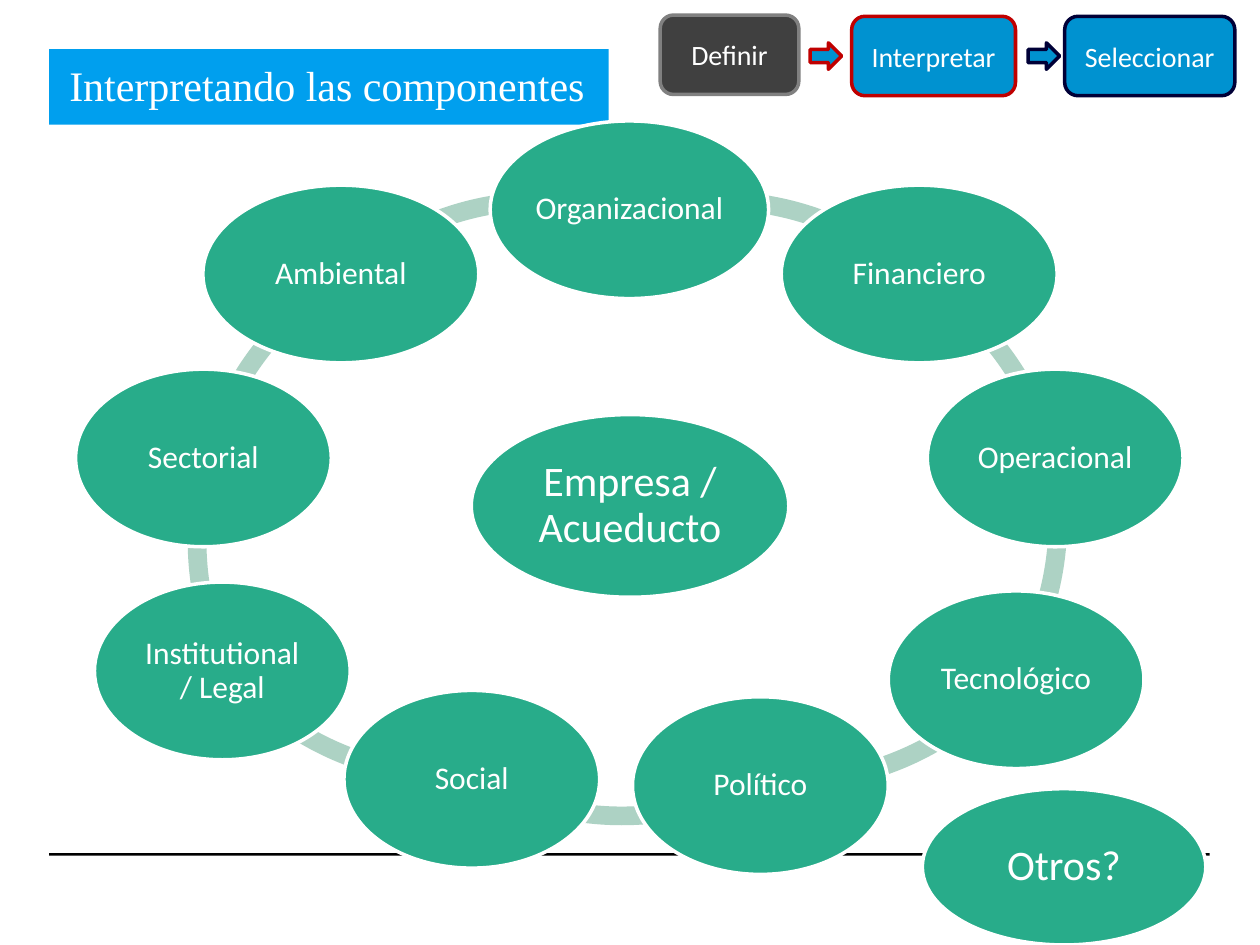
from pptx import Presentation
from pptx.dml.color import RGBColor
from pptx.enum.shapes import MSO_SHAPE
from pptx.enum.text import MSO_ANCHOR, PP_ALIGN
from pptx.util import Inches, Pt

COLORS = {
    "white": "FFFFFF", "black": "000000", "title": "009FEE",
    "green": "28AC8A", "arc": "ADD2C4", "blue": "0092D0",
    "red": "C00000", "navy": "000037", "dark": "404040", "gray": "808080",
}

# label, left, top, width within the ring
COMPONENTS = [
    ("Organizacional", 3.29, 0, 2.21),
    ("Financiero", 5.6, 0.51, 2.19),
    ("Operacional", 6.76, 1.97, 2.03),
    ("Tecnológico", 6.45, 3.73, 2.03),
    ("Político", 4.42, 4.57, 2.03),
    ("Social", 2.13, 4.52, 2.03),
    ("Institutional / Legal", 0.15, 3.66, 2.03),
    ("Sectorial", 0, 1.97, 2.03),
    ("Ambiental", 1.01, 0.51, 2.19),
]
# left, top within the ring, start and end adjustments
ARCS = [
    (1.3, 0.56, 136.56, 172.37),
    (0.91, 0.85, 116.33, 143.7),
    (0.89, 0.94, 92.4, 117.64),
    (0.6, 0.48, 51.71, 84.56),
    (1.94, 0.8, 37.28, 72.07),
    (3.26, 0.53, 23.98, 57.27),
    (3.08, 0.78, 208.67, 19.48),
    (3.1, 0.84, 180.44, 207.74),
    (2.71, 0.56, 151.55, 187.47),
]
# label, left, top, width, fill, line
STEPS = [
    ("Definir", 0, 0, 1.1, "dark", "gray"),
    ("Interpretar", 1.52, 0.01, 1.3, "blue", "red"),
    ("Seleccionar", 3.21, 0.01, 1.35, "blue", "navy"),
]
STEP_ARROWS = [(1.19, "red"), (2.92, "navy")]


def add_figure(page, kind, box, fill, line=None):
    """Add a preset shape in box (left, top, width, height in inches)."""
    shape = page.shapes.add_shape(kind, *[Inches(length) for length in box])
    shape.shadow.inherit = False
    shape.fill.solid()
    shape.fill.fore_color.rgb = RGBColor.from_string(COLORS[fill])
    if line:
        shape.line.color.rgb = RGBColor.from_string(COLORS[line])
        shape.line.width = Pt(2)
    else:
        shape.line.fill.background()
    return shape


def write(shape, text, size, font="Calibri", align=PP_ALIGN.CENTER):
    frame = shape.text_frame
    frame.word_wrap = True
    frame.vertical_anchor = MSO_ANCHOR.MIDDLE
    para = frame.paragraphs[0]
    para.text = text
    para.alignment = align
    para.font.name = font
    para.font.size = Pt(size)
    para.font.color.rgb = RGBColor.from_string(COLORS["white"])
    return frame


def set_insets(frame, left, top, right, bottom):
    frame.margin_left, frame.margin_top = Inches(left), Inches(top)
    frame.margin_right, frame.margin_bottom = Inches(right), Inches(bottom)


def add_title(page, box):
    banner = add_figure(page, MSO_SHAPE.RECTANGLE, box, "title")
    frame = write(banner, "Interpretando las componentes", 24,
                  "Times New Roman", PP_ALIGN.LEFT)
    frame.word_wrap = False
    frame.vertical_anchor = MSO_ANCHOR.TOP
    set_insets(frame, 0.16, 0.08, 0.16, 0.12)


def add_bubble(page, box, text, size):
    bubble = add_figure(page, MSO_SHAPE.OVAL, box, "green", "white")
    frame = write(bubble, text, size)
    set_insets(frame, 0.03, 0.03, 0.03, 0.03)
    frame.paragraphs[0].line_spacing = 0.9


def add_ring(page, left, top):
    """Place the arcs, the central company and its components."""
    for x, y, start, end in ARCS:
        arc = add_figure(page, MSO_SHAPE.BLOCK_ARC,
                         (left + x, top + y, 4.79, 4.79), "arc")
        for index, value in enumerate((start, end, 0.031)):
            arc.adjustments[index] = value
    add_bubble(page, (left + 3.14, top + 2.33, 2.52, 1.45),
               "Empresa / Acueducto", 24)
    for label, x, y, width in COMPONENTS:
        add_bubble(page, (left + x, top + y, width, 1.41), label, 18)


def add_steps(page, left, top):
    for label, x, y, width, fill, line in STEPS:
        step = add_figure(page, MSO_SHAPE.ROUNDED_RECTANGLE,
                          (left + x, top + y, width, 0.63), fill, line)
        write(step, label, 16)
    for x, line in STEP_ARROWS:
        add_figure(page, MSO_SHAPE.RIGHT_ARROW,
                   (left + x, top + 0.22, 0.25, 0.21), "blue", line)


def main():
    deck = Presentation()
    deck.slide_width, deck.slide_height = Inches(10), Inches(7.5)
    page = deck.slides.add_slide(deck.slide_layouts[6])
    add_figure(page, MSO_SHAPE.RECTANGLE, (0.39, 6.77, 9.21, 0.02), "black")
    add_title(page, (0.39, 0.39, 4.44, 0.6))
    add_ring(page, 0.6, 0.96)
    add_steps(page, 5.24, 0.12)
    add_bubble(page, (7.32, 6.26, 2.25, 1.24), "Otros?", 24)
    deck.save("out.pptx")


if __name__ == "__main__":
    main()
